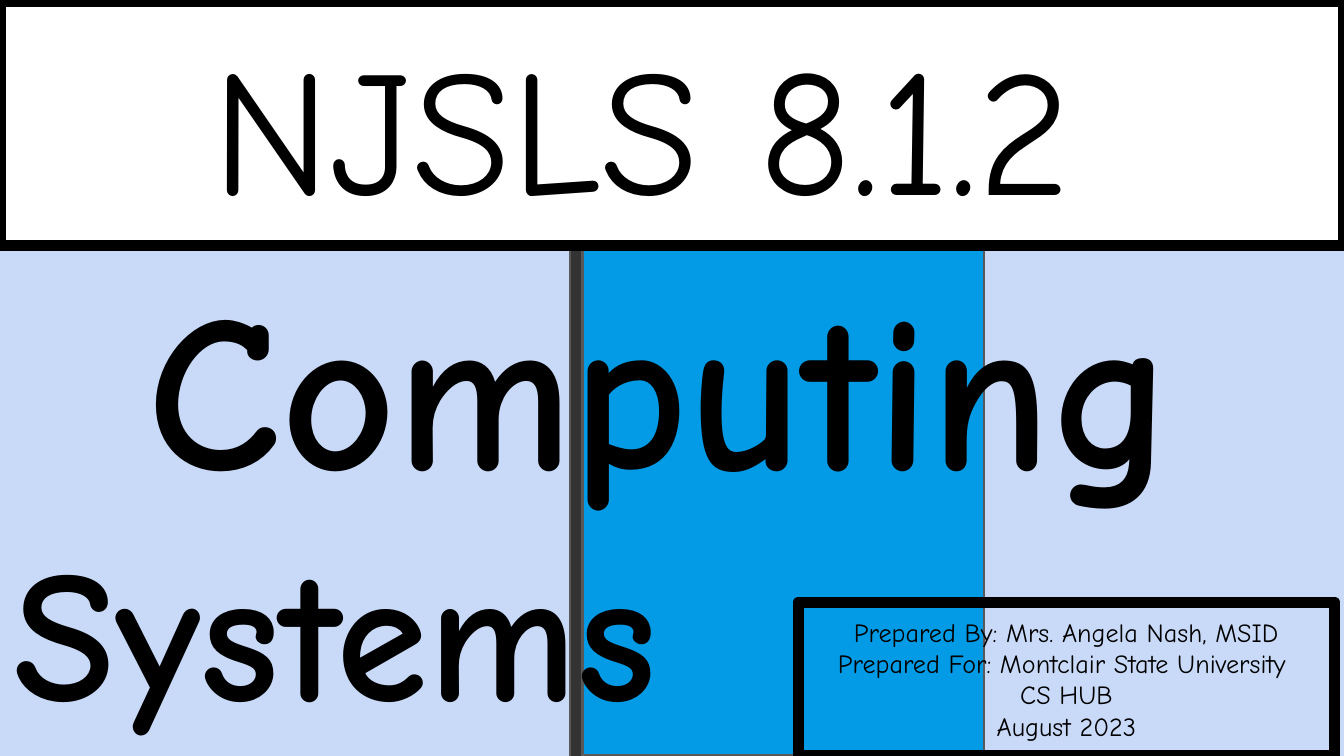
from dataclasses import dataclass

from pptx import Presentation
from pptx.dml.color import RGBColor
from pptx.enum.shapes import MSO_SHAPE
from pptx.enum.text import MSO_ANCHOR, PP_ALIGN
from pptx.util import Pt

RECTANGLE = MSO_SHAPE.RECTANGLE
MIDDLE = MSO_ANCHOR.MIDDLE
CENTER = PP_ALIGN.CENTER
LEFT = PP_ALIGN.LEFT

FONT = "Comic Neue"
SLIDE_WIDTH, SLIDE_HEIGHT = 720, 405
TITLE_ONLY = 5
COLORS = {
    "background": "C9DAF8",
    "divider": "333333",
    "blue": "039BE5",
    "stripe_edge": "595959",
    "white": "FFFFFF",
    "black": "000000",
}


@dataclass(frozen=True)
class Panel:
    left: float
    top: float
    width: float
    height: float
    fill: str | None
    edge: str
    edge_width: float
    lines: tuple[str, ...] = ()
    text_size: float = 14


STRIPES = (
    Panel(305.3, 0.7, 6.5, 404.6, "divider", "stripe_edge", 0.75),
    Panel(312.5, 1.4, 214.6, 403.2, "blue", "stripe_edge", 0.75),
)
FRAMES = (
    Panel(427.7, 322.6, 287.3, 82.1, None, "black", 6, (
        "Prepared By: Mrs. Angela Nash, MSID",
        "Prepared For: Montclair State University ",
        "CS HUB",
        "August 2023",
    )),
    Panel(0, 0.7, 720, 131, "white", "black", 6, ("NJSLS 8.1.2 ",), 96),
)
UNIT_NAME = (("Computing", 119), (" Systems", 100))


def color(name: str) -> RGBColor:
    return RGBColor.from_string(COLORS[name])


def apply(target, values: dict) -> None:
    for attribute, value in values.items():
        setattr(target, attribute, value)


def format_frame(frame) -> None:
    inset = Pt(7.2)
    apply(frame, {
        "word_wrap": True, "vertical_anchor": MIDDLE,
        "margin_left": inset, "margin_right": inset,
        "margin_top": inset, "margin_bottom": inset,
    })


def format_font(font, size: float, bold: bool = False) -> None:
    apply(font, {"name": FONT, "size": Pt(size), "bold": bold})
    font.color.rgb = color("black")


def draw_panel(slide, panel: Panel) -> None:
    shape = slide.shapes.add_shape(
        RECTANGLE, Pt(panel.left), Pt(panel.top), Pt(panel.width), Pt(panel.height))
    shape.shadow.inherit = False
    if panel.fill:
        shape.fill.solid()
        shape.fill.fore_color.rgb = color(panel.fill)
    else:
        shape.fill.background()
    shape.line.color.rgb = color(panel.edge)
    shape.line.width = Pt(panel.edge_width)

    frame = shape.text_frame
    format_frame(frame)
    for index, line in enumerate(panel.lines):
        paragraph = frame.add_paragraph() if index else frame.paragraphs[0]
        paragraph.alignment = CENTER
        run = paragraph.add_run()
        run.text = line
        format_font(run.font, panel.text_size)


def draw_title(slide) -> None:
    title = slide.shapes.title
    apply(title, {"left": Pt(0), "top": Pt(122.4),
                  "width": Pt(720), "height": Pt(283.7)})
    format_frame(title.text_frame)
    paragraph = title.text_frame.paragraphs[0]
    paragraph.alignment = LEFT
    properties = paragraph._p.get_or_add_pPr()
    properties.set("marL", "0")
    properties.set("indent", str(Pt(72)))
    for words, size in UNIT_NAME:
        run = paragraph.add_run()
        run.text = words
        format_font(run.font, size, bold=True)
    # Bring the title in front of the stripes drawn so far.
    slide.shapes._spTree.append(title._element)


def main() -> None:
    deck = Presentation()
    apply(deck, {"slide_width": Pt(SLIDE_WIDTH), "slide_height": Pt(SLIDE_HEIGHT)})
    slide = deck.slides.add_slide(deck.slide_layouts[TITLE_ONLY])
    slide.background.fill.solid()
    slide.background.fill.fore_color.rgb = color("background")

    for stripe in STRIPES:
        draw_panel(slide, stripe)
    draw_title(slide)
    for frame in FRAMES:
        draw_panel(slide, frame)
    deck.save("out.pptx")


if __name__ == "__main__":
    main()
